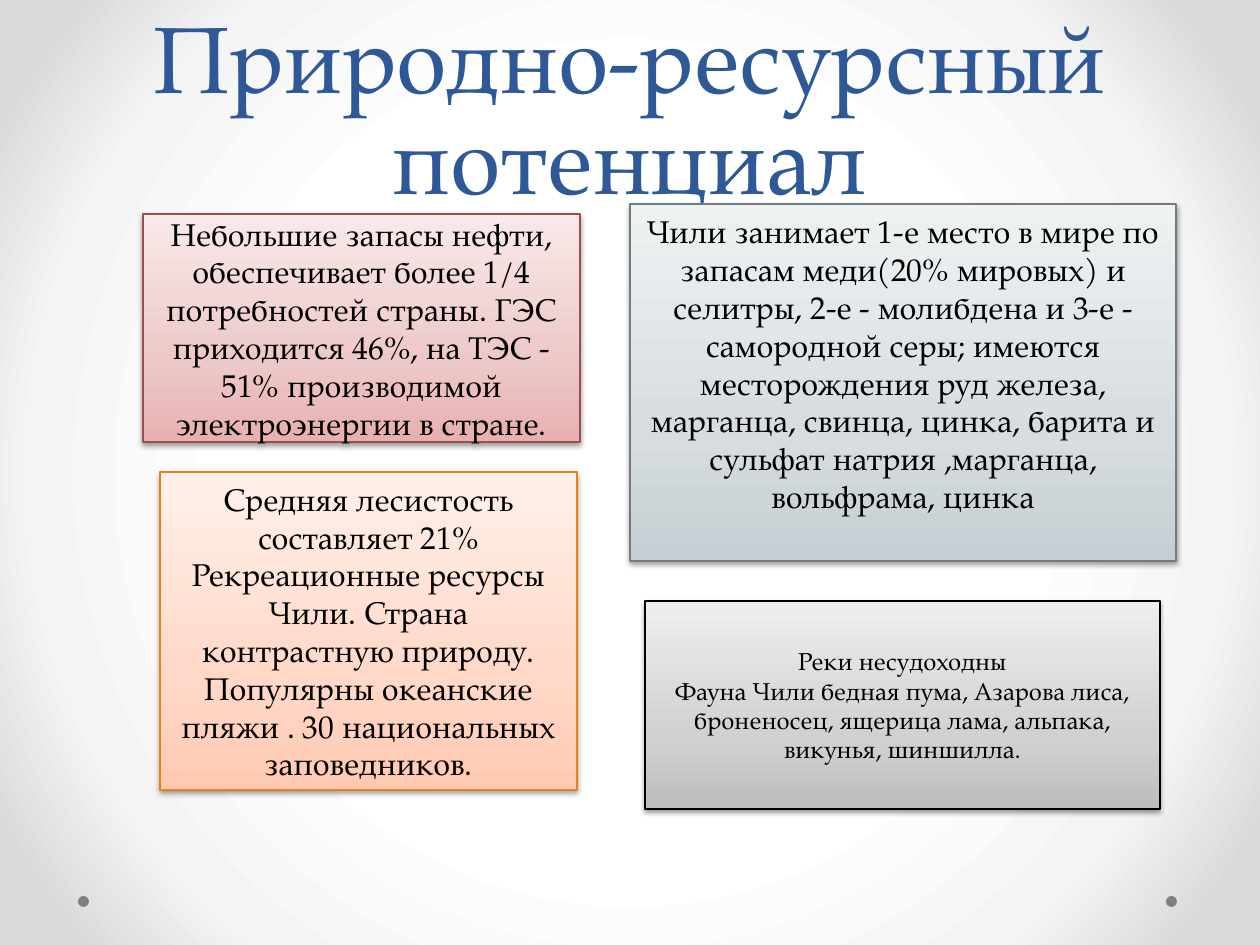
from dataclasses import dataclass

from lxml import etree
from pptx import Presentation, util as u
from pptx.dml.color import RGBColor
from pptx.enum import shapes, text
from pptx.oxml import ns

PX = u.Inches(1) / 126


@dataclass(frozen=True)
class Theme:
    font: str = "TeX Gyre Pagella"
    title: str = "2F5897"
    ink: str = "000000"
    dot: str = "808080"
    title_size: int = 54
    title_leading: int = 58
    body_size: int = 18
    small_size: int = 14
    border: float = 0.75


THEME = Theme()
BACKDROP = [(50, "FFFFFF"), (76, "F4F4F4"), (92, "DADADA")]
PANEL_STOPS = (0, 35, 100)
SHADOW = {"blurRad": u.Pt(3.1), "dist": u.Pt(1.6), "dir": 90 * 60000,
          "algn": "ctr", "rotWithShape": 0}

TITLE = ("Природно-ресурсный потенциал", (63, 0, 1134, 220))
DOTS = [(1166, 896, 11, 11), (78, 896, 11, 11)]
PANELS = [
    {"box": (143, 214, 437, 228), "line": "9A4E4E",
     "tints": ("E8B0B0", "EDC8C8", "F9E9E9"), "size": THEME.body_size,
     "text": ["Небольшие запасы нефти, обеспечивает более 1/4 потребностей "
              "страны. ГЭС приходится 46%, на ТЭС - 51% производимой "
              "электроэнергии в стране."]},
    {"box": (630, 204, 546, 357), "line": "727D82", "foot": 44,
     "tints": ("C5CED2", "D6DCDF", "EFF2F3"), "size": THEME.body_size,
     "text": ["Чили занимает 1-е место в мире по запасам меди(20% мировых) и "
              "селитры, 2-е - молибдена и 3-е - самородной серы; имеются "
              "месторождения руд железа, марганца, свинца, цинка, барита и "
              "сульфат натрия ,марганца, вольфрама, цинка"]},
    {"box": (160, 472, 417, 318), "line": "E6811C",
     "tints": ("FFC9B1", "FFD8C8", "FFF0EA"), "size": THEME.body_size,
     "text": ["Средняя лесистость составляет 21% Рекреационные ресурсы Чили. "
              "Страна контрастную природу. Популярны океанские пляжи . "
              "30 национальных заповедников."]},
    {"box": (645, 601, 515, 208), "line": "000000",
     "tints": ("BDBDBD", "D1D1D1", "EEEEEE"), "size": THEME.small_size,
     "text": ["Реки несудоходны",
              "Фауна Чили бедная пума, Азарова лиса, броненосец, ящерица "
              "лама, альпака, викунья, шиншилла."]},
]


def px(*lengths):
    return [round(length * PX) for length in lengths]


def rgb(value):
    return RGBColor.from_string(value)


def apply(target, values):
    for name, value in values.items():
        setattr(target, name, value)


def add(parent, tag, **attributes):
    child = etree.SubElement(parent, ns.qn(tag))
    for name, value in attributes.items():
        child.set(name, str(value))
    return child


def paint_gradient(fill, owner, stops, circular=False):
    fill.gradient()
    gradient = owner.find(".//" + ns.qn("a:gradFill"))
    for child in list(gradient):
        gradient.remove(child)
    stop_list = add(gradient, "a:gsLst")
    for position, color in stops:
        stop = add(stop_list, "a:gs", pos=position * 1000)
        add(stop, "a:srgbClr", val=color)
    if circular:
        path = add(gradient, "a:path", path="circle")
        add(path, "a:fillToRect", **dict.fromkeys("ltrb", 50000))
    else:
        add(gradient, "a:lin", ang=270 * 60000, scaled=0)


def write(frame, lines, size, color, anchor, leading=None):
    apply(frame, {"word_wrap": True, "vertical_anchor": anchor})
    for index, line in enumerate(lines):
        paragraph = frame.add_paragraph() if index else frame.paragraphs[0]
        apply(paragraph, {"alignment": text.PP_ALIGN.CENTER,
                          "line_spacing": leading})
        run = paragraph.add_run()
        run.text = line
        apply(run.font, {"name": THEME.font, "size": u.Pt(size)})
        run.font.color.rgb = rgb(color)


def add_shape(slide, kind, box):
    shape = slide.shapes.add_shape(kind, *px(*box))
    shape.shadow.inherit = False
    return shape


def add_dot(slide, box):
    dot = add_shape(slide, shapes.MSO_SHAPE.OVAL, box)
    dot.fill.solid()
    dot.fill.fore_color.rgb = rgb(THEME.dot)
    dot.line.fill.background()


def add_title(slide, wording, box):
    title = slide.shapes.add_textbox(*px(*box))
    write(title.text_frame, [wording], THEME.title_size, THEME.title,
          text.MSO_ANCHOR.BOTTOM, u.Pt(THEME.title_leading))


def add_panel(slide, panel):
    shape = add_shape(slide, shapes.MSO_SHAPE.RECTANGLE, panel["box"])
    paint_gradient(shape.fill, shape.element, zip(PANEL_STOPS, panel["tints"]))
    shape.line.color.rgb = rgb(panel["line"])
    shape.line.width = u.Pt(THEME.border)
    effects = shape.element.find(".//" + ns.qn("a:effectLst"))
    shadow = add(effects, "a:outerShdw", **SHADOW)
    add(add(shadow, "a:srgbClr", val="000000"), "a:alpha", val=38000)
    write(shape.text_frame, panel["text"], panel["size"], THEME.ink,
          text.MSO_ANCHOR.MIDDLE)
    if "foot" in panel:
        shape.text_frame.margin_bottom = px(panel["foot"])[0]


def main():
    deck = Presentation()
    deck.slide_width, deck.slide_height = px(1260, 945)
    slide = deck.slides.add_slide(deck.slide_layouts[6])
    paint_gradient(slide.background.fill, slide.element, BACKDROP, circular=True)
    for dot in DOTS:
        add_dot(slide, dot)
    add_title(slide, *TITLE)
    for panel in PANELS:
        add_panel(slide, panel)
    deck.save("out.pptx")


if __name__ == "__main__":
    main()
